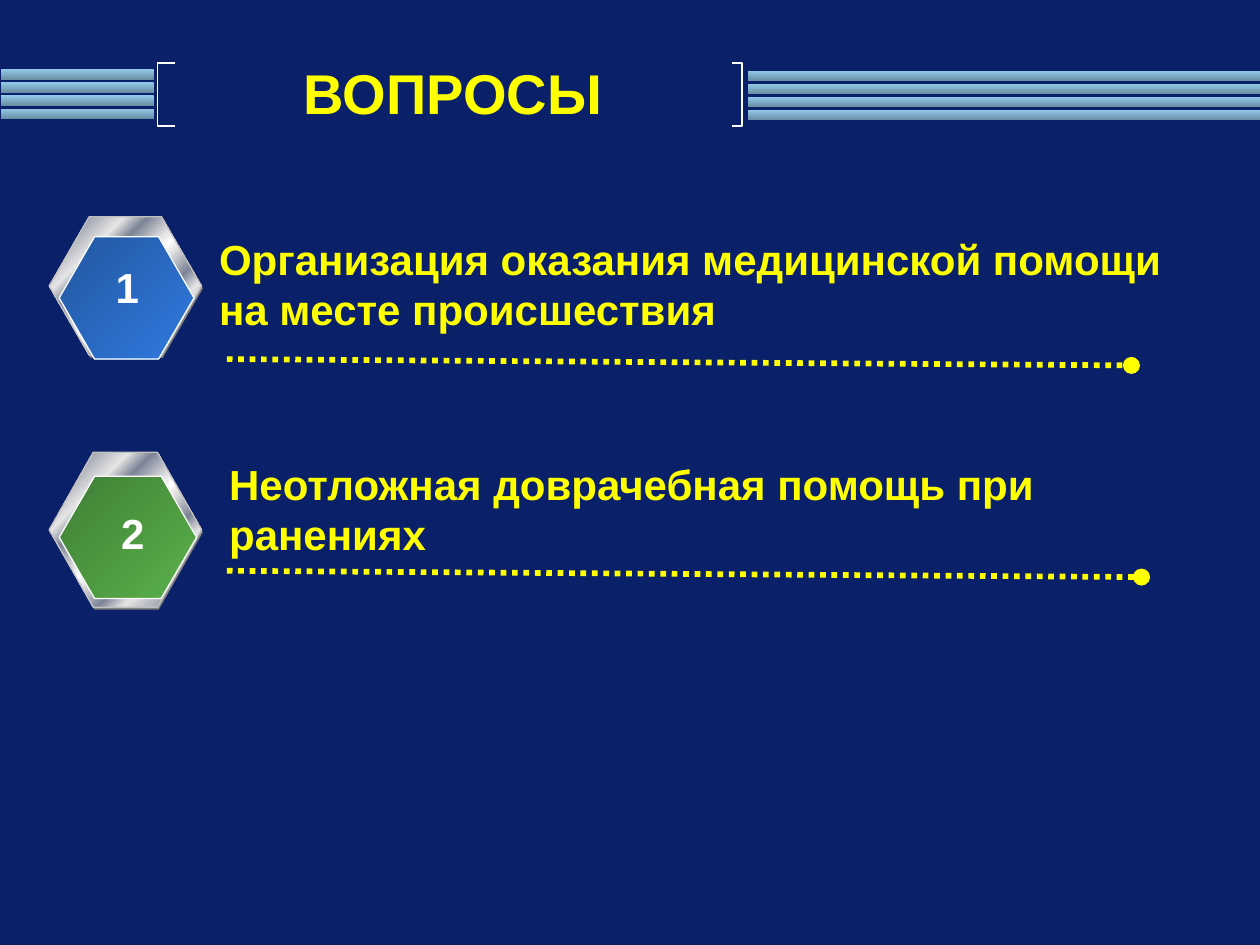
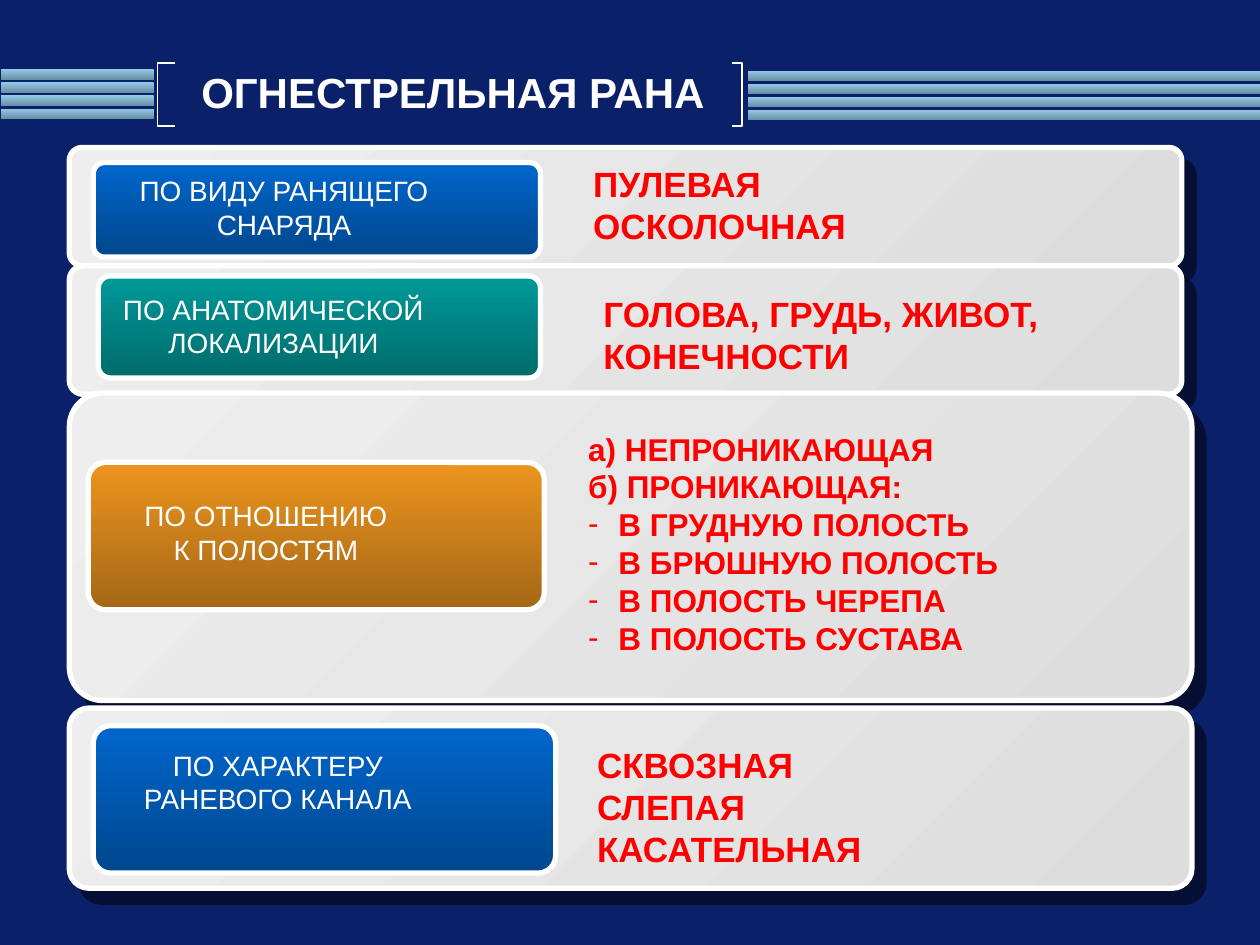
from dataclasses import dataclass

import lxml.etree
import pptx
import pptx.dml.color
import pptx.enum.dml
import pptx.enum.shapes
import pptx.enum.text
import pptx.oxml.ns
import pptx.util

RGBColor = pptx.dml.color.RGBColor
Preset = pptx.enum.shapes.MSO_SHAPE
Align = pptx.enum.text.PP_ALIGN
qn = pptx.oxml.ns.qn

NAVY = RGBColor(0x0A, 0x20, 0x68)
WHITE = RGBColor(0xFF, 0xFF, 0xFF)
YELLOW = RGBColor(0xFF, 0xFF, 0x00)
RED = RGBColor(0xFF, 0x00, 0x00)
BLACK = RGBColor(0x00, 0x00, 0x00)
GRAY = RGBColor(0x80, 0x80, 0x80)
SILVER = RGBColor(0xC0, 0xC0, 0xC0)
PALE = RGBColor(0xE6, 0xE6, 0xE6)
STEEL = RGBColor(0x7D, 0x84, 0x96)
STRIPE = ((0, RGBColor(0x94, 0xCA, 0xE8)), (100, RGBColor(0x6A, 0x90, 0xA6)))
PANEL = ((0, RGBColor(0xEE, 0xEE, 0xEE)), (100, RGBColor(0xDD, 0xDD, 0xDD)))
BLUE = ((0, RGBColor(0x00, 0x66, 0xCC)), (100, RGBColor(0x00, 0x47, 0x8E)))
TEAL = ((0, RGBColor(0x00, 0x99, 0x99)), (100, RGBColor(0x00, 0x6B, 0x6B)))
ORANGE = ((0, RGBColor(0xEC, 0x94, 0x1E)), (100, RGBColor(0xA5, 0x67, 0x15)))
HEX_BLUE = ((0, RGBColor(0x22, 0x57, 0xA0)), (100, RGBColor(0x2F, 0x7A, 0xDF)))
HEX_GREEN = ((0, RGBColor(0x40, 0x7F, 0x36)), (100, RGBColor(0x5A, 0xB1, 0x4B)))
METAL = tuple(zip(
    (0, 8, 26, 34, 46, 50, 54, 66, 74, 92, 100),
    (PALE, STEEL, PALE, STEEL, PALE, WHITE, PALE, STEEL, PALE, STEEL, PALE)))

FONT = "Arial"
COLUMNS, ROWS = 100, 75
CELL = pptx.util.Inches(0.1)


@dataclass
class Box:
    left: float
    top: float
    width: float
    height: float

    def inside(self, left, top, width, height):
        return Box(self.left + left, self.top + top, width, height)

    def lengths(self):
        return [round(value * CELL) for value in
                (self.left, self.top, self.width, self.height)]


def fill_gradient(shape, stops, angle):
    shape.fill.gradient()
    shape.fill.gradient_angle = 360 - angle
    stop_list = shape._element.spPr.find(".//" + qn("a:gsLst"))
    for stop in list(stop_list):
        stop_list.remove(stop)
    for position, color in stops:
        stop = lxml.etree.SubElement(stop_list, qn("a:gs"), pos=str(position * 1000))
        lxml.etree.SubElement(stop, qn("a:srgbClr"), val=str(color))


def set_line(shape, color, width):
    shape.line.color.rgb = color
    shape.line.width = pptx.util.Pt(width)


def add_preset(slide, preset, box, adjustment=None):
    shape = slide.shapes.add_shape(preset, *box.lengths())
    shape.shadow.inherit = False
    shape.line.fill.background()
    if adjustment is not None:
        shape.adjustments[0] = adjustment
    return shape


def add_drop_shadow(shape):
    effects = shape._element.spPr.find(qn("a:effectLst"))
    shadow = lxml.etree.SubElement(
        effects, qn("a:outerShdw"), dist=str(pptx.util.Pt(10.6)),
        dir=str(49 * 60000), algn="ctr", rotWithShape="0")
    color = lxml.etree.SubElement(shadow, qn("a:srgbClr"), val=str(BLACK))
    lxml.etree.SubElement(color, qn("a:alpha"), val="50000")


def format_paragraph(paragraph, size, color, bold, alignment):
    paragraph.alignment = alignment
    paragraph.font.name = FONT
    paragraph.font.size = pptx.util.Pt(size)
    paragraph.font.bold = bold
    paragraph.font.color.rgb = color


def add_dash_bullet(paragraph):
    properties = paragraph._p.get_or_add_pPr()
    indent = pptx.util.Inches(0.24)
    properties.set("marL", str(indent))
    properties.set("indent", str(-indent))
    lxml.etree.SubElement(properties, qn("a:buFont"), typeface=FONT)
    lxml.etree.SubElement(properties, qn("a:buChar"), char="-")


def add_text(slide, box, lines, size, color, bold=True, alignment=Align.LEFT, bullets_from=None):
    frame = slide.shapes.add_textbox(*box.lengths()).text_frame
    frame.word_wrap = True
    for index, line in enumerate(lines):
        paragraph = frame.add_paragraph() if index else frame.paragraphs[0]
        paragraph.text = line
        if bullets_from is not None and index >= bullets_from:
            add_dash_bullet(paragraph)
        format_paragraph(paragraph, size, color, bold, alignment)


def add_stripes(slide, box):
    for row in range(4):
        stripe = add_preset(slide, Preset.RECTANGLE, box.inside(0, row * 1.04, box.width, 0.8))
        fill_gradient(stripe, STRIPE, 90)


def add_bracket(slide, box, open_right):
    left, top, width, height = box.lengths()
    edge, tip = (left, left + width) if open_right else (left + width, left)
    builder = slide.shapes.build_freeform(tip, top, scale=1.0)
    builder.add_line_segments(
        [(edge, top), (edge, top + height), (tip, top + height)], close=False)
    bracket = builder.convert_to_shape()
    bracket.shadow.inherit = False
    bracket.fill.background()
    set_line(bracket, WHITE, 0.75)


def add_header(slide, box, title, size, color):
    add_stripes(slide, box.inside(0.1, 0.5, 12.1, 4))
    add_bracket(slide, box.inside(12.5, 0, 1.4, 5), True)
    add_stripes(slide, box.inside(59.4, 0.6, 40.6, 4))
    add_bracket(slide, box.inside(58.1, 0, 0.8, 5), False)
    heading = slide.shapes.title
    heading.left, heading.top, heading.width, heading.height = (
        box.inside(12.5, -0.8, 46.9, 6.2).lengths())
    heading.text_frame.text = title
    heading.text_frame.vertical_anchor = pptx.enum.text.MSO_ANCHOR.MIDDLE
    format_paragraph(heading.text_frame.paragraphs[0], size, color, True, Align.CENTER)


def add_dotted_rule(slide, box):
    left, top, width, height = box.lengths()
    rule = slide.shapes.add_connector(
        pptx.enum.shapes.MSO_CONNECTOR.STRAIGHT, left, top, left + width, top + height)
    set_line(rule, YELLOW, 3.25)
    rule.line.dash_style = pptx.enum.dml.MSO_LINE.ROUND_DOT
    lxml.etree.SubElement(rule.line._ln, qn("a:tailEnd"), type="oval")
    lxml.etree.SubElement(rule._element.spPr, qn("a:effectLst"))


def add_badge(slide, box, face_box, stops):
    shade = add_preset(slide, Preset.HEXAGON, box.inside(0.1, 0.2, box.width, box.height), 0.289)
    shade.fill.solid()
    shade.fill.fore_color.rgb = GRAY
    for part, colors, outline in ((box, METAL, SILVER), (face_box, stops, WHITE)):
        hexagon = add_preset(slide, Preset.HEXAGON, part, 0.289)
        fill_gradient(hexagon, colors, 45)
        set_line(hexagon, outline, 0.75)


def add_question(slide, box, number, question, stops, face, number_place, text_place, rule):
    add_badge(slide, box.inside(0, 0, 12.1, box.height), box.inside(*face), stops)
    add_dotted_rule(slide, box.inside(*rule))
    add_text(slide, box.inside(*text_place), [question], 24, YELLOW)
    add_text(slide, box.inside(*number_place), [number], 24, WHITE, alignment=Align.CENTER)


def add_class_row(slide, box, stops, button, label, label_place, values, values_place,
                  size=20, bullets_from=None):
    panel = add_preset(slide, Preset.ROUNDED_RECTANGLE, box, 0.109)
    fill_gradient(panel, PANEL, 45)
    add_drop_shadow(panel)
    plate = add_preset(slide, Preset.ROUNDED_RECTANGLE, box.inside(*button), 0.119)
    fill_gradient(plate, stops, 90)
    for shape in (panel, plate):
        set_line(shape, WHITE, 3)
    add_text(slide, box.inside(*label_place), label, 16, WHITE, False, Align.CENTER)
    add_text(slide, box.inside(*values_place), values, size, RED, bullets_from=bullets_from)


def build_questions(slide, header):
    add_header(slide, header, "ВОПРОСЫ", 32, YELLOW)
    add_question(
        slide, Box(3.9, 17.2, 92, 11), "1",
        "Организация оказания медицинской помощи на месте происшествия", HEX_BLUE,
        face=(0.8, 1.6, 10.7, 9.7), number_place=(2.3, 3.1, 7.8, 5.1),
        text_place=(12.5, 0.8, 81.2, 9.1), rule=(14.1, 11.3, 71.8, 0.5))
    add_question(
        slide, Box(3.9, 35.9, 92, 12.3), "2",
        "Неотложная доврачебная помощь при ранениях", HEX_GREEN,
        face=(0.8, 1.9, 10.9, 9.7), number_place=(4.7, 3.9, 3.9, 5),
        text_place=(13.3, 0, 80.5, 9.1), rule=(14.1, 9.4, 72.6, 0.5))


def build_wound_classes(slide, header):
    add_header(slide, header, "ОГНЕСТРЕЛЬНАЯ РАНА", 24, WHITE)
    add_class_row(
        slide, Box(5.5, 11.7, 88.3, 9.4), BLUE, (1.9, 1.2, 35.5, 7.5),
        ["ПО ВИДУ РАНЯЩЕГО СНАРЯДА"], (3.9, 1.6, 26.3, 5.9),
        ["ПУЛЕВАЯ", "ОСКОЛОЧНАЯ"], (40.6, 0.7, 45.9, 7.7))
    add_class_row(
        slide, Box(5.5, 21.1, 88.3, 10.2), TEAL, (2.3, 0.8, 35.1, 8.1),
        ["ПО АНАТОМИЧЕСКОЙ", "ЛОКАЛИЗАЦИИ"], (2.8, 1.6, 26.8, 6.4),
        ["ГОЛОВА, ГРУДЬ, ЖИВОТ, КОНЕЧНОСТИ"], (41.4, 1.6, 44.8, 7.7))
    add_class_row(
        slide, Box(5.5, 31.2, 89.1, 24.4), ORANGE, (1.5, 5.5, 36.2, 11.7),
        ["ПО ОТНОШЕНИЮ", "К ПОЛОСТЯМ"], (4.4, 7.9, 22.4, 6.4),
        ["а) НЕПРОНИКАЮЩАЯ", "б) ПРОНИКАЮЩАЯ:", "В ГРУДНУЮ ПОЛОСТЬ",
         "В БРЮШНУЮ ПОЛОСТЬ", "В ПОЛОСТЬ ЧЕРЕПА", "В ПОЛОСТЬ СУСТАВА"],
        (40.2, 2.4, 46.7, 19.2), size=18, bullets_from=2)
    add_class_row(
        slide, Box(5.5, 56.2, 89.1, 14.3), BLUE, (1.9, 1.4, 36.7, 11.7),
        ["ПО ХАРАКТЕРУ РАНЕВОГО КАНАЛА"], (3.3, 2.7, 26.5, 6.4),
        ["СКВОЗНАЯ", "СЛЕПАЯ", "КАСАТЕЛЬНАЯ"], (40.9, 2.3, 46, 11.1))


def main():
    presentation = pptx.Presentation()
    presentation.slide_width = COLUMNS * CELL
    presentation.slide_height = ROWS * CELL
    background = presentation.slide_master.background.fill
    background.solid()
    background.fore_color.rgb = NAVY
    header = Box(0, 5, COLUMNS, 5)
    for build in (build_questions, build_wound_classes):
        build(presentation.slides.add_slide(presentation.slide_layouts[5]), header)
    presentation.save("out.pptx")


if __name__ == "__main__":
    main()
